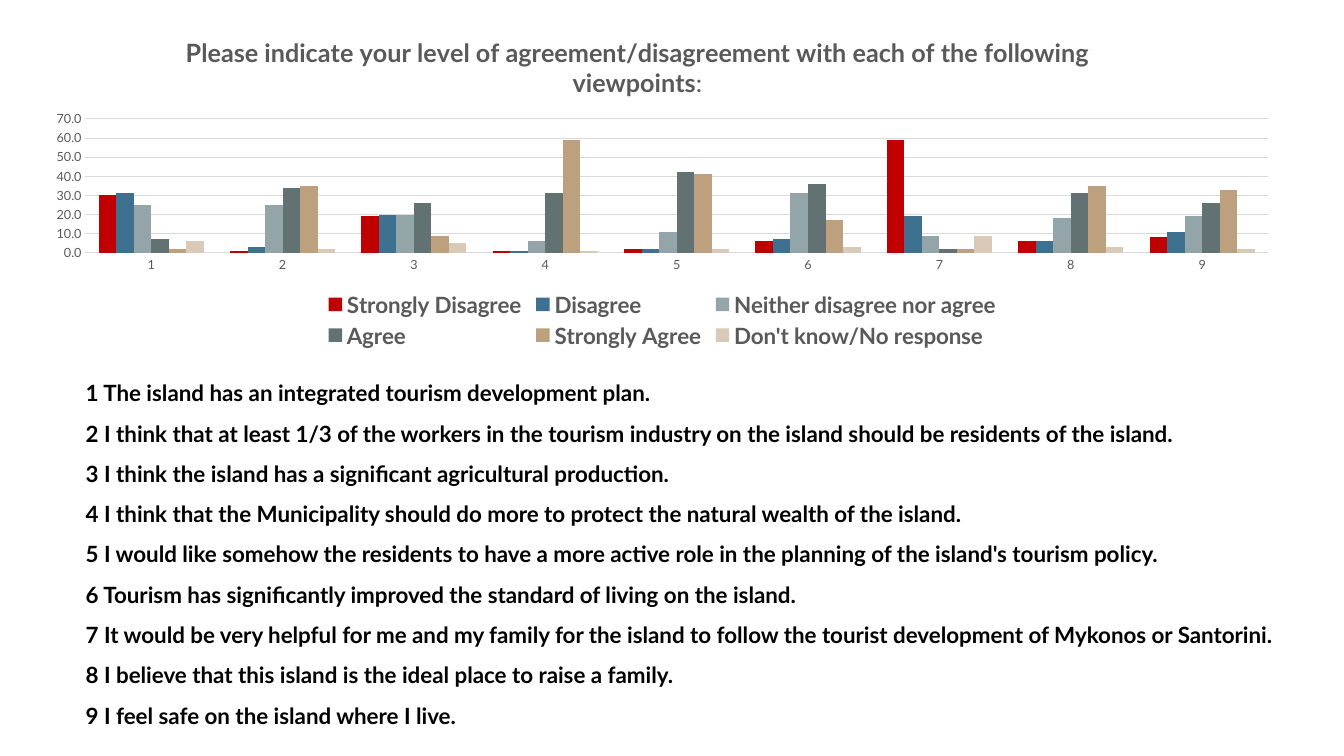
from lxml import etree
from pptx import Presentation
from pptx.chart.data import CategoryChartData
from pptx.dml.color import RGBColor
from pptx.enum.chart import XL_CHART_TYPE, XL_LEGEND_POSITION, XL_TICK_MARK
from pptx.enum.text import MSO_ANCHOR, MSO_AUTO_SIZE
from pptx.oxml.ns import qn
from pptx.util import Pt

COLUMN = XL_CHART_TYPE.COLUMN_CLUSTERED
BOTTOM = XL_LEGEND_POSITION.BOTTOM
NO_TICK = XL_TICK_MARK.NONE
TOP = MSO_ANCHOR.TOP
NO_FIT = MSO_AUTO_SIZE.NONE

FACE = "Lato"
COLORS = {"text": "000000", "label": "595959", "grid": "D9D9D9"}

ANSWERS = [
    ("Strongly Disagree", "C00000", (30, 1, 19, 1, 2, 6, 59, 6, 8)),
    ("Disagree", "3E7090", (31, 3, 20, 1, 2, 7, 19, 6, 11)),
    ("Neither disagree nor agree", "93A5A8", (25, 25, 20, 6, 11, 31, 9, 18, 19)),
    ("Agree", "627272", (7, 34, 26, 31, 42, 36, 2, 31, 26)),
    ("Strongly Agree", "BDA07D", (2, 35, 9, 59, 41, 17, 2, 35, 33)),
    ("Don't know/No response", "D8CAB7", (6, 2, 5, 1, 2, 3, 9, 3, 2)),
]
VIEWS = [
    "The island has an integrated tourism development plan.",
    "I think that at least 1/3 of the workers in the tourism industry on the island should be residents of the island.",
    "I think the island has a significant agricultural production.",
    "I think that the Municipality should do more to protect the natural wealth of the island.",
    "I would like somehow the residents to have a more active role in the planning of the island's tourism policy.",
    "Tourism has significantly improved the standard of living on the island.",
    "It would be very helpful for me and my family for the island to follow the tourist development of Mykonos or Santorini.",
    "I believe that this island is the ideal place to raise a family.",
    "I feel safe on the island where I live.",
]


def style(font, size, color, bold=False):
    font.name = FACE
    font.size = Pt(size)
    font.bold = bold
    font.color.rgb = RGBColor.from_string(COLORS[color])


def place(node, **parts):
    """Give a chart part a manual layout, in fractions of the chart."""
    layout = node.find(qn("c:layout"))
    if layout is None:
        layout = etree.Element(qn("c:layout"))
        text = node.find(qn("c:tx"))
        node.insert(0 if text is None else 1, layout)
    for child in list(layout):
        layout.remove(child)
    manual = etree.SubElement(layout, qn("c:manualLayout"))
    for name, value in parts.items():
        etree.SubElement(manual, qn("c:" + name)).set("val", str(value))


prs = Presentation()
prs.slide_width, prs.slide_height = Pt(960), Pt(540)
slide = prs.slides.add_slide(prs.slide_layouts[1])
title = slide.shapes.title
title.element.getparent().remove(title.element)

# Viewpoints
body = slide.placeholders[1]
body.left, body.top, body.width, body.height = Pt(54), Pt(257.8), Pt(882), Pt(265.7)
frame = body.text_frame
frame.word_wrap = True
frame.auto_size = NO_FIT
frame.vertical_anchor = TOP
frame.text = "\n".join(f"{num} {view}" for num, view in enumerate(VIEWS, 1))
for para in frame.paragraphs:
    para.line_spacing = 1.5
    para.space_before = para.space_after = Pt(0)
    props = para._p.get_or_add_pPr()
    props.set("marL", "0")
    props.set("indent", "0")
    etree.SubElement(props, qn("a:buNone"))
    style(para.runs[0].font, 16, "text", True)

# Chart
data = CategoryChartData(number_format="###0.0")
data.categories = [str(num) for num in range(1, len(VIEWS) + 1)]
for name, color, values in ANSWERS:
    data.add_series(name, values)
chart = slide.shapes.add_chart(
    COLUMN, Pt(22.3), Pt(15.8), Pt(901.4), Pt(236.2), data).chart
style(chart.font, 10, "text")

plot = chart.plots[0]
plot.gap_width = 150
plot.overlap = 0
plot.vary_by_categories = False
for series, (name, color, values) in zip(plot.series, ANSWERS):
    series.format.fill.solid()
    series.format.fill.fore_color.rgb = RGBColor.from_string(color)

for axis in (chart.category_axis, chart.value_axis):
    axis.major_tick_mark = axis.minor_tick_mark = NO_TICK
    axis.format.line.fill.background()
    style(axis.tick_labels.font, 9, "label")
scale = chart.value_axis
scale.minimum_scale, scale.maximum_scale, scale.major_unit = 0, 70, 10
scale.tick_labels.number_format = "###0.0"
scale.tick_labels.number_format_is_linked = False
grid = scale.major_gridlines.format.line
grid.width = Pt(0.75)
grid.color.rgb = RGBColor.from_string(COLORS["grid"])

chart.has_legend = True
chart.legend.position = BOTTOM
chart.legend.include_in_layout = False
style(chart.legend.font, 16, "label", True)

chart.has_title = True
head = chart.chart_title.text_frame.paragraphs[0]
for words, bold in (
    ("Please indicate your level of agreement/disagreement "
     "with each of the following viewpoints", True),
    (":", False),
):
    run = head.add_run()
    run.text = words
    style(run.font, 18, "label", bold)
chart.chart_title.include_in_layout = False

place(chart.chart_title._element, xMode="edge", yMode="edge", x=0.12, y=0.03)
area = chart._chartSpace.chart.plotArea
place(area, layoutTarget="inner", xMode="edge", yMode="edge",
      x=0.043, y=0.293, w=0.937, h=0.405)

prs.save("out.pptx")
